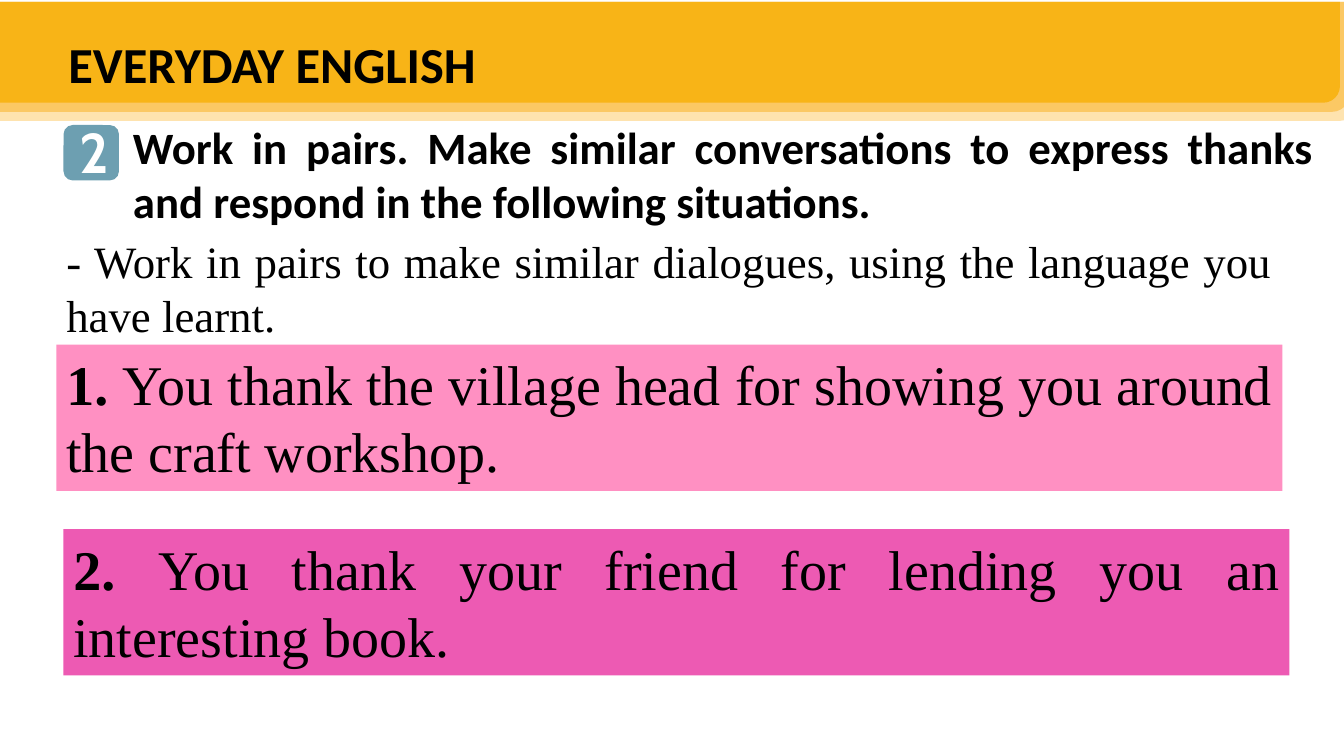
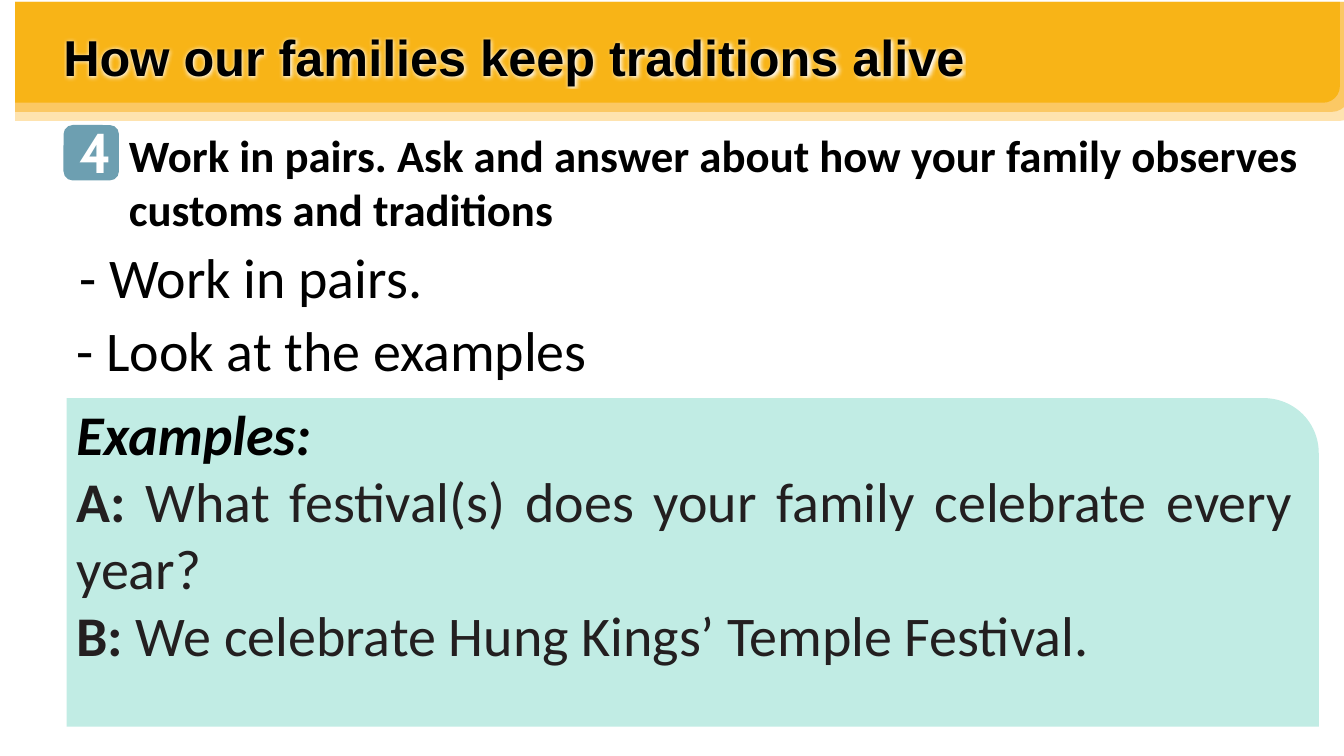
"""Build two English lesson slides with a shared header band and task badge."""
from lxml.etree import SubElement
from pptx import Presentation
from pptx.dml.color import RGBColor
from pptx.enum.shapes import MSO_SHAPE
from pptx.enum.text import MSO_ANCHOR, MSO_AUTO_SIZE, PP_ALIGN
from pptx.oxml.ns import qn
from pptx.util import Pt

PX = 9144
HUES = {
    "pale": "FEE3AF", "mid": "FBC864", "gold": "F8B417", "badge": "6D9FB1",
    "rose": "FF90C2", "pink": "ED5AB3", "mint": "C1ECE4",
    "black": "000000", "ink": "231F20", "white": "FFFFFF",
}
BANDS = [("pale", 1348, 118), ("mid", 1339, 109), ("gold", 1329, 100)]
SIDES = {"l": PP_ALIGN.LEFT, "c": PP_ALIGN.CENTER, "j": PP_ALIGN.JUSTIFY}
SANS, SERIF = "Calibri", "Times New Roman"

SLIDES = [
    {
        "left": 0, "num": "2",
        "title": ("EVERYDAY ENGLISH", (48, 28, 444, 71), SANS, "c", False),
        "task": ("Work in pairs. Make similar conversations to express thanks "
                 "and respond in the following situations.",
                 (122, 114, 1191, 118), "j"),
        "notes": [("- Work in pairs to make similar dialogues, using the "
                   "language you have learnt.", (56, 227, 1216, 118), SERIF, 32)],
        "cards": [
            ((56, 342, 1216, 145), MSO_SHAPE.RECTANGLE, "rose", SERIF, 5, [
                [("1. ", "b", "black"),
                 ("You thank the village head for showing you around "
                  "the craft workshop.", "", "black")]]),
            ((63, 525, 1216, 145), MSO_SHAPE.RECTANGLE, "pink", SERIF, 5, [
                [("2. ", "b", "black"),
                 ("You thank your friend for lending you an "
                  "interesting book.", "", "black")]]),
        ],
    },
    {
        "left": 15, "num": "4",
        "title": ("How our families keep traditions alive",
                  (53, 21, 1236, 71), "Arial", "l", True),
        "task": ("Work in pairs. Ask and answer about how your family observes "
                 "customs and traditions", (118, 122, 1191, 118), "l"),
        "notes": [("- Work in pairs.", (69, 236, 1216, 77), SANS, 40),
                  ("- Look at the examples", (66, 308, 1216, 77), SANS, 40)],
        "cards": [
            ((66, 395, 1242, 326), MSO_SHAPE.ROUND_1_RECTANGLE, "mint", SANS, 1, [
                [("Examples:", "bi", "black")],
                [("A:", "b", "ink"),
                 (" What festival(s) does your family celebrate every year?",
                  "", "ink")],
                [("B:", "b", "ink"),
                 (" We celebrate Hung Kings’ Temple Festival.", "", "ink")]]),
        ],
    },
]


def tint(hue):
    return RGBColor.from_string(HUES[hue])


def scale(box):
    return [side * PX for side in box]


def block(slide, box, kind, hue):
    shape = slide.shapes.add_shape(kind, *scale(box))
    shape.shadow.inherit = False
    shape.fill.solid()
    shape.fill.fore_color.rgb = tint(hue)
    shape.line.fill.background()
    return shape


def write(frame, paras, font, size, side):
    frame.word_wrap = True
    for i, runs in enumerate(paras):
        para = frame.paragraphs[0] if i == 0 else frame.add_paragraph()
        para.alignment = SIDES[side]
        for words, style, hue in runs:
            run = para.add_run()
            run.text = words
            face = run.font
            face.name, face.size = font, Pt(size)
            face.bold, face.italic = "b" in style, "i" in style
            face.color.rgb = tint(hue)


def label(slide, box, words, font, size, side, style="", hue="black"):
    frame = slide.shapes.add_textbox(*scale(box)).text_frame
    write(frame, [[(words, style, hue)]], font, size, side)
    frame.auto_size = MSO_AUTO_SIZE.SHAPE_TO_FIT_TEXT
    return frame.paragraphs[0].runs[0]


def glow(run):
    fill = run.font._element.find(qn("a:solidFill"))
    effect = SubElement(run.font._element, qn("a:effectLst"))
    halo = SubElement(effect, qn("a:glow"), rad=str(5 * PX))
    SubElement(halo, qn("a:srgbClr"), val=HUES["white"])
    fill.addnext(effect)


def header(slide, data):
    left = data["left"]
    for hue, right, high in BANDS:
        band = block(slide, (left, 2, right - left, high),
                     MSO_SHAPE.ROUND_1_RECTANGLE, hue)
        band.element.spPr.xfrm.set("flipV", "1")
    words, box, side = data["task"]
    label(slide, box, words, SANS, 32, side, "b")
    block(slide, (63, 124, 55, 55), MSO_SHAPE.ROUNDED_RECTANGLE, "badge")
    label(slide, (69, 112, 43, 77), data["num"], "Cabin", 40, "c", "b", "white")
    words, box, font, side, lit = data["title"]
    run = label(slide, box, words, font, 36, side, "b")
    if lit:
        glow(run)


def card(slide, box, kind, hue, font, top, paras):
    frame = block(slide, box, kind, hue).text_frame
    frame.vertical_anchor = MSO_ANCHOR.TOP
    frame.margin_top = top * PX
    write(frame, paras, font, 40, "j")


def main():
    deck = Presentation()
    deck.slide_width, deck.slide_height = scale((1333, 750))
    for data in SLIDES:
        slide = deck.slides.add_slide(deck.slide_layouts[6])
        header(slide, data)
        for words, box, font, size in data["notes"]:
            label(slide, box, words, font, size, "j")
        for item in data["cards"]:
            card(slide, *item)
    deck.save("out.pptx")


if __name__ == "__main__":
    main()
